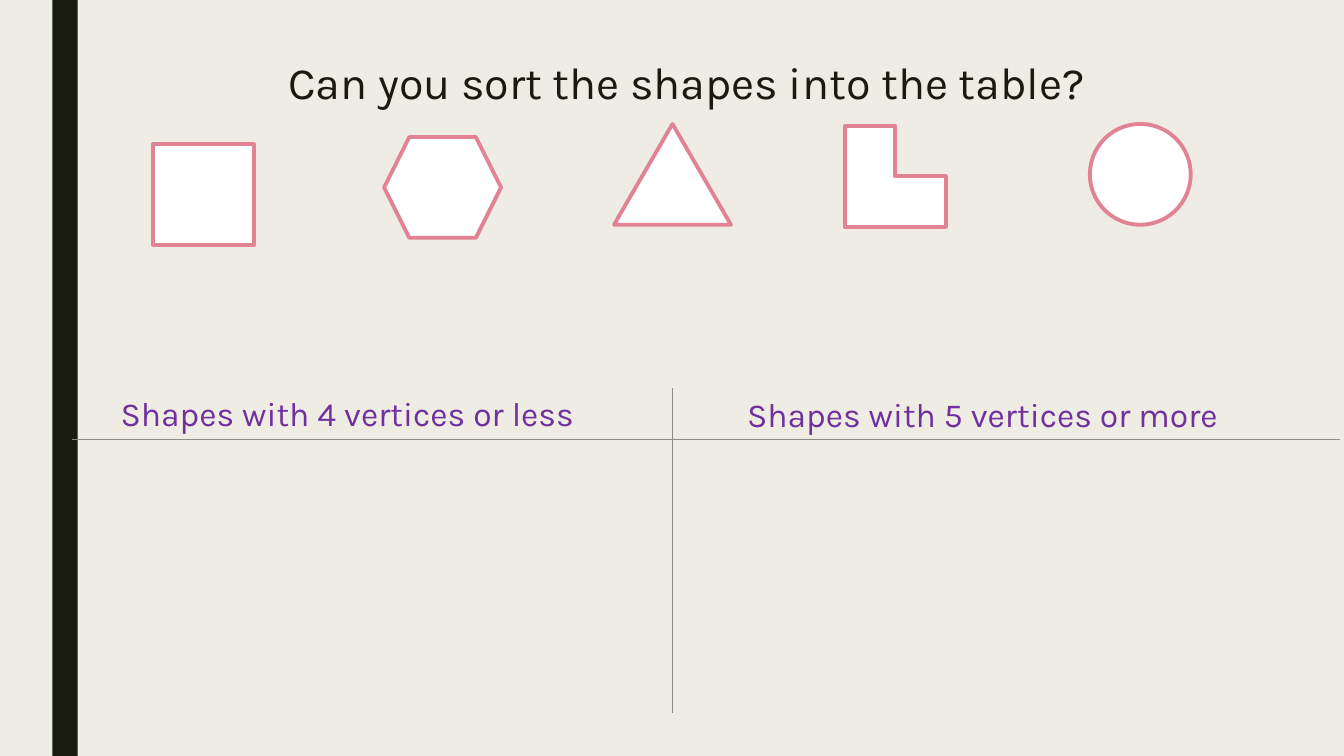
from dataclasses import dataclass

from lxml.etree import SubElement
from pptx import Presentation
from pptx.dml.color import RGBColor
from pptx.enum.shapes import MSO_CONNECTOR, MSO_SHAPE
from pptx.enum.text import MSO_ANCHOR, MSO_AUTO_SIZE, PP_ALIGN
from pptx.oxml.ns import qn
from pptx.shapes.autoshape import Shape
from pptx.slide import Slide
from pptx.text.text import _Paragraph as Paragraph
from pptx.util import Inches, Pt

CREAM = RGBColor(0xEF, 0xED, 0xE3)
DARK = RGBColor(0x19, 0x1B, 0x0E)
PURPLE = RGBColor(0x70, 0x30, 0xA0)
GREY = RGBColor(0x8C, 0x8D, 0x86)
PINK = RGBColor(0xE2, 0x83, 0x94)
WHITE = RGBColor(0xFF, 0xFF, 0xFF)
FONT = "Karla"


@dataclass(frozen=True)
class Box:
    left: float
    top: float
    width: float
    height: float

    def lengths(self) -> list[Inches]:
        return [Inches(v) for v in (self.left, self.top, self.width, self.height)]


@dataclass(frozen=True)
class Figure:
    kind: MSO_SHAPE
    box: Box


@dataclass(frozen=True)
class Label:
    text: str
    box: Box
    size: int
    color: RGBColor
    anchor: MSO_ANCHOR = MSO_ANCHOR.TOP
    fit: MSO_AUTO_SIZE = MSO_AUTO_SIZE.SHAPE_TO_FIT_TEXT


@dataclass(frozen=True)
class Rule:
    x1: float
    y1: float
    x2: float
    y2: float


TITLE = Label("Can you sort the shapes into the table? ", Box(1.22, 0.24, 11.3, 1.19),
              32, DARK, MSO_ANCHOR.MIDDLE, MSO_AUTO_SIZE.NONE)
HEADINGS = [
    Label("Shapes with 4 vertices or less", Box(1.01, 3.85, 4.87, 0.5), 24, PURPLE),
    Label("Shapes with 5 vertices or more", Box(7.31, 3.86, 4.87, 0.5), 24, PURPLE),
]
TABLE_RULES = [Rule(0.71, 4.36, 13.29, 4.36), Rule(6.67, 3.85, 6.67, 7.07)]
FIGURES = [
    Figure(MSO_SHAPE.RECTANGLE, Box(1.52, 1.43, 1, 1)),
    Figure(MSO_SHAPE.HEXAGON, Box(3.81, 1.36, 1.16, 1)),
    Figure(MSO_SHAPE.ISOSCELES_TRIANGLE, Box(6.09, 1.23, 1.16, 1)),
    Figure(MSO_SHAPE.CORNER, Box(8.38, 1.25, 1, 1)),
    Figure(MSO_SHAPE.OVAL, Box(10.81, 1.23, 1, 1)),
]


def add_filled(slide: Slide, figure: Figure, color: RGBColor) -> Shape:
    shape = slide.shapes.add_shape(figure.kind, *figure.box.lengths())
    shape.shadow.inherit = False
    shape.fill.solid()
    shape.fill.fore_color.rgb = color
    shape.line.fill.background()
    return shape


def add_figure(slide: Slide, figure: Figure) -> None:
    """Draw one of the white, pink-edged shapes to be sorted."""
    line = add_filled(slide, figure, WHITE).line
    line.color.rgb = PINK
    line.width = Pt(2.75)


def add_label(slide: Slide, label: Label) -> Paragraph:
    frame = slide.shapes.add_textbox(*label.box.lengths()).text_frame
    frame.word_wrap = True
    frame.auto_size = label.fit
    frame.vertical_anchor = label.anchor
    paragraph = frame.paragraphs[0]
    paragraph.alignment = PP_ALIGN.CENTER
    run = paragraph.add_run()
    run.text = label.text
    run.font.name = FONT
    run.font.size = Pt(label.size)
    run.font.color.rgb = label.color
    return paragraph


def add_rule(slide: Slide, rule: Rule) -> None:
    ends = [Inches(v) for v in (rule.x1, rule.y1, rule.x2, rule.y2)]
    connector = slide.shapes.add_connector(MSO_CONNECTOR.STRAIGHT, *ends)
    connector.line.color.rgb = GREY
    connector.line.width = Pt(0.5)
    SubElement(connector._element.spPr, qn("a:effectLst"))


def main() -> None:
    deck = Presentation()
    deck.slide_width, deck.slide_height = Inches(13.33), Inches(7.5)
    slide = deck.slides.add_slide(deck.slide_layouts[6])
    slide.background.fill.solid()
    slide.background.fill.fore_color.rgb = CREAM

    add_filled(slide, Figure(MSO_SHAPE.RECTANGLE, Box(0.52, 0, 0.25, 7.5)), DARK)
    title = add_label(slide, TITLE)
    title.line_spacing = 0.94
    title.space_before = Pt(10)
    title.space_after = Pt(2)
    for heading in HEADINGS:
        add_label(slide, heading)
    for rule in TABLE_RULES:
        add_rule(slide, rule)
    for figure in FIGURES:
        add_figure(slide, figure)

    deck.save("out.pptx")


if __name__ == "__main__":
    main()
